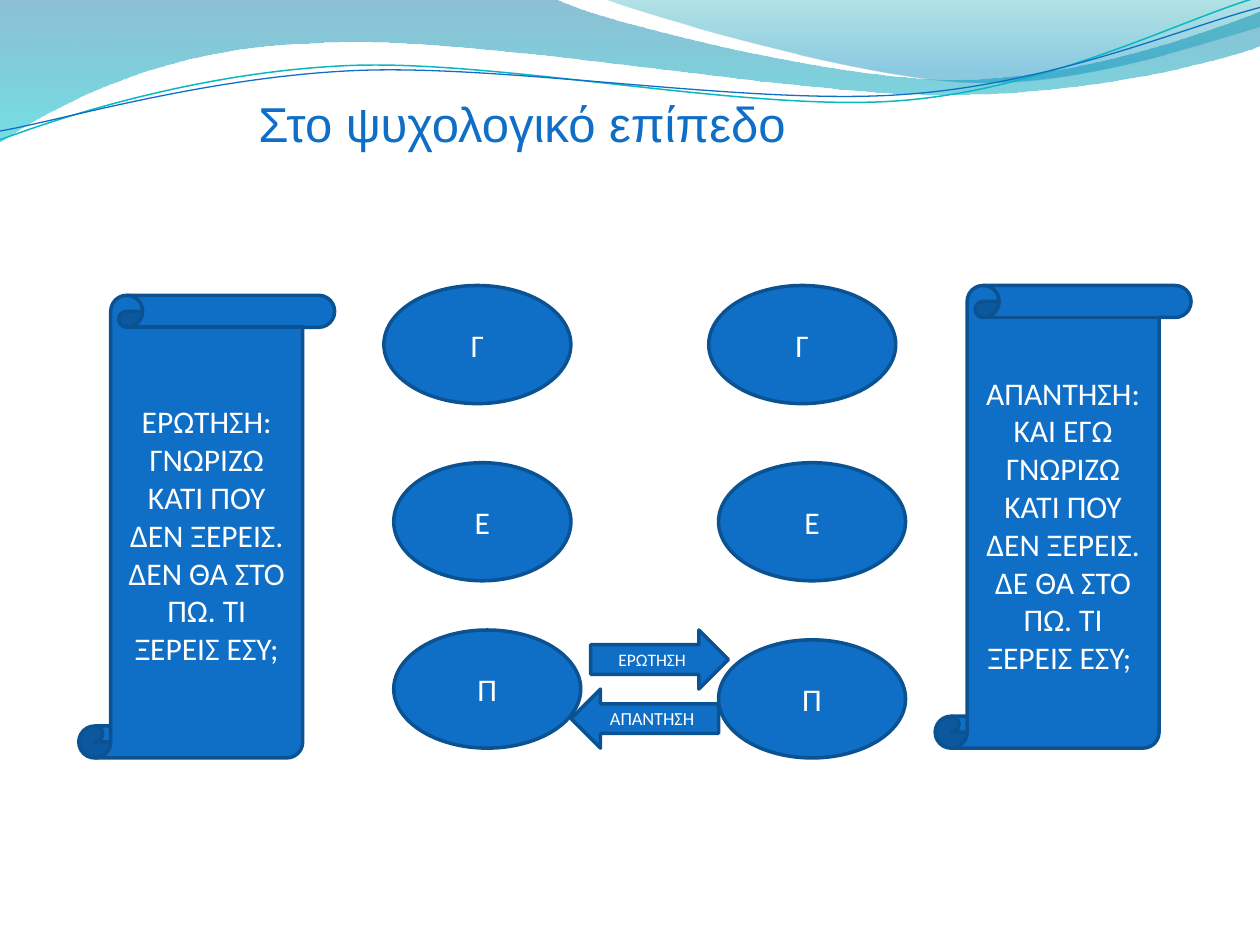
import math
from dataclasses import dataclass

from lxml import etree
from pptx import Presentation
from pptx import util as u
from pptx.dml.color import RGBColor
from pptx.enum import shapes, text
from pptx.oxml.ns import qn

WIDTH, HEIGHT = u.Inches(10), u.Inches(7.5)
COLUMNS, ROWS = 128, 96
BLUE, NAVY, TEAL, WHITE = "0F6FC6", "0B5292", "0AB8BF", "FFFFFF"
TILT = 357.3
Kind = shapes.MSO_SHAPE


@dataclass
class Node:
    kind: Kind
    column: float
    row: float
    columns: float
    rows: float
    words: tuple[str, ...]
    size: float = 18


@dataclass
class Wave:
    """Start point, then segments: 2 numbers for a line, 6 for a Bézier curve."""
    start: tuple
    segments: list
    stops: tuple = ()  # (position, colour, opacity in percent)
    line: str = ""
    weight: float = 0
    center: tuple = ()  # pivot of a tilted wave


WAVES = [
    Wave((0, 0), [(4.4, -0.01), (4.76, 0.17, 6.64, 0.63, 7.58, 0.63),
                  (8.53, 0.63, 9.58, 0.26, 10, 0.09), (10.01, 0.36),
                  (9.83, 0.44, 8.7, 0.76, 7.46, 0.75),
                  (6.22, 0.75, 3.82, 0.28, 2.57, 0.34),
                  (1.29, 0.36, 0.46, 0.83, -0.01, 1.13), (0, 0)],
         stops=((0, "0074A1", 45), (1, "00C6CF", 55))),
    Wave((4.79, -0.01), [(5.09, 0.11, 6.82, 0.62, 7.69, 0.65),
                         (8.56, 0.69, 9.61, 0.32, 10, 0.21), (10, 0), (4.79, -0.01)],
         stops=((0, "00A1A9", 30), (0.8, "008BBF", 45))),
    Wave((0, 1.11), [(0.48, 0.93, 1.58, 0.57, 2.77, 0.52),
                     (3.95, 0.47, 5.93, 0.89, 7.13, 0.8),
                     (8.33, 0.71, 9.38, 0.15, 9.98, -0.02)],
         line=TEAL, weight=0.85, center=(4.99, 0.58)),
    Wave((0, 1.04), [(0.47, 0.96, 1.64, 0.61, 2.83, 0.56),
                     (4.03, 0.51, 5.97, 0.84, 7.17, 0.75),
                     (8.36, 0.67, 9.41, 0.21, 10, 0.06)],
         line=BLUE, weight=0.75, center=(5, 0.59)),
]

NODES = [
    # Ego states of the two people
    Node(Kind.OVAL, 39, 29, 19, 12, ("Γ",)),
    Node(Kind.OVAL, 40, 47, 18, 12, ("Ε",)),
    Node(Kind.OVAL, 40, 64, 19, 12, ("Π",)),
    Node(Kind.OVAL, 73, 65, 19, 12, ("Π",)),
    Node(Kind.OVAL, 73, 47, 19, 12, ("Ε",)),
    Node(Kind.OVAL, 72, 29, 19, 12, ("Γ",)),
    # Messages between them
    Node(Kind.RIGHT_ARROW, 60, 64, 14, 6, ("ΕΡΩΤΗΣΗ",), 10),
    Node(Kind.LEFT_ARROW, 58, 70, 15, 6, ("ΑΠΑΝΤΗΣΗ",), 10.5),
    # What each message means
    Node(Kind.VERTICAL_SCROLL, 8, 30, 26, 47,
         ("ΕΡΩΤΗΣΗ:", "ΓΝΩΡΙΖΩ ΚΑΤΙ ΠΟΥ ΔΕΝ ΞΕΡΕΙΣ. ΔΕΝ ΘΑ ΣΤΟ ΠΩ. ΤΙ ΞΕΡΕΙΣ ΕΣΥ;")),
    Node(Kind.VERTICAL_SCROLL, 95, 29, 26, 47,
         ("ΑΠΑΝΤΗΣΗ:ΚΑΙ ΕΓΩ ΓΝΩΡΙΖΩ ΚΑΤΙ ΠΟΥ ΔΕΝ ΞΕΡΕΙΣ. ΔΕ ΘΑ ΣΤΟ ΠΩ. ΤΙ ΞΕΡΕΙΣ ΕΣΥ; ",)),
]


def paint(color, value: str) -> None:
    color.rgb = RGBColor.from_string(value)


def cells(column: float, row: float, columns: float, rows: float) -> tuple:
    return (int(WIDTH * column / COLUMNS), int(HEIGHT * row / ROWS),
            int(WIDTH * columns / COLUMNS), int(HEIGHT * rows / ROWS))


def write(box, *words: str, size: float, font: str, color: str, align) -> None:
    frame = box.text_frame
    frame.word_wrap = True
    frame.vertical_anchor = text.MSO_ANCHOR.MIDDLE
    for index, phrase in enumerate(words):
        para = frame.add_paragraph() if index else frame.paragraphs[0]
        para.alignment = align
        span = para.add_run()
        span.text = phrase
        span.font.size, span.font.name = u.Pt(size), font
        paint(span.font.color, color)


def place(wave: Wave, x: float, y: float) -> tuple[int, int]:
    """Give a point in EMU, turned back by the tilt that the shape adds."""
    if wave.center:
        angle = math.radians(-TILT)
        dx, dy = x - wave.center[0], y - wave.center[1]
        x = wave.center[0] + dx * math.cos(angle) - dy * math.sin(angle)
        y = wave.center[1] + dx * math.sin(angle) + dy * math.cos(angle)
    return u.Inches(x), u.Inches(y)


def bend(shape, segments: list) -> None:
    """Join each three points of a Bézier segment into one curve."""
    track = next(shape.element.iter(qn("a:path")))
    steps = iter(track.findall(qn("a:lnTo")))
    for segment in segments:
        step = next(steps)
        if len(segment) == 2:
            continue
        curve = etree.SubElement(track, qn("a:cubicBezTo"))
        step.addprevious(curve)
        for knot in (step, next(steps), next(steps)):
            curve.append(knot[0])
            track.remove(knot)


def draw_wave(page, wave: Wave) -> None:
    points = [place(wave, *segment[i:i + 2])
              for segment in wave.segments for i in range(0, len(segment), 2)]
    builder = page.shapes.build_freeform(*place(wave, *wave.start))
    builder.add_line_segments(points, close=bool(wave.stops))
    shape = builder.convert_to_shape()
    bend(shape, wave.segments)
    shape.shadow.inherit = False
    if not wave.stops:
        shape.rotation = TILT
        shape.fill.background()
        paint(shape.line.color, wave.line)
        shape.line.width = u.Pt(wave.weight)
        return
    shape.line.fill.background()
    shape.fill.gradient()
    shape.fill.gradient_angle = 270
    for stop, (position, color, _) in zip(shape.fill.gradient_stops, wave.stops):
        stop.position = position
        paint(stop.color, color)
    colors = shape.element.spPr.iter(qn("a:srgbClr"))
    for node, (_, _, opacity) in zip(list(colors), wave.stops):
        etree.SubElement(node, qn("a:alpha"), val=str(opacity * 1000))


def draw_node(page, node: Node) -> None:
    shape = page.shapes.add_shape(
        node.kind, *cells(node.column, node.row, node.columns, node.rows))
    shape.shadow.inherit = False
    shape.fill.solid()
    paint(shape.fill.fore_color, BLUE)
    paint(shape.line.color, NAVY)
    shape.line.width = u.Pt(2)
    write(shape, *node.words, size=node.size, font="Calibri", color=WHITE,
          align=text.PP_ALIGN.CENTER)


def main() -> None:
    deck = Presentation()
    deck.slide_width, deck.slide_height = WIDTH, HEIGHT
    page = deck.slides.add_slide(deck.slide_layouts[6])

    # Decorative waves along the top
    for wave in WAVES:
        draw_wave(page, wave)

    # Title
    title = page.shapes.add_textbox(*cells(25, 5, 87, 15))
    write(title, "Στο ψυχολογικό επίπεδο", size=28, font="Arial", color=BLUE,
          align=text.PP_ALIGN.LEFT)

    # Diagram
    for node in NODES:
        draw_node(page, node)

    deck.save("out.pptx")


if __name__ == "__main__":
    main()
